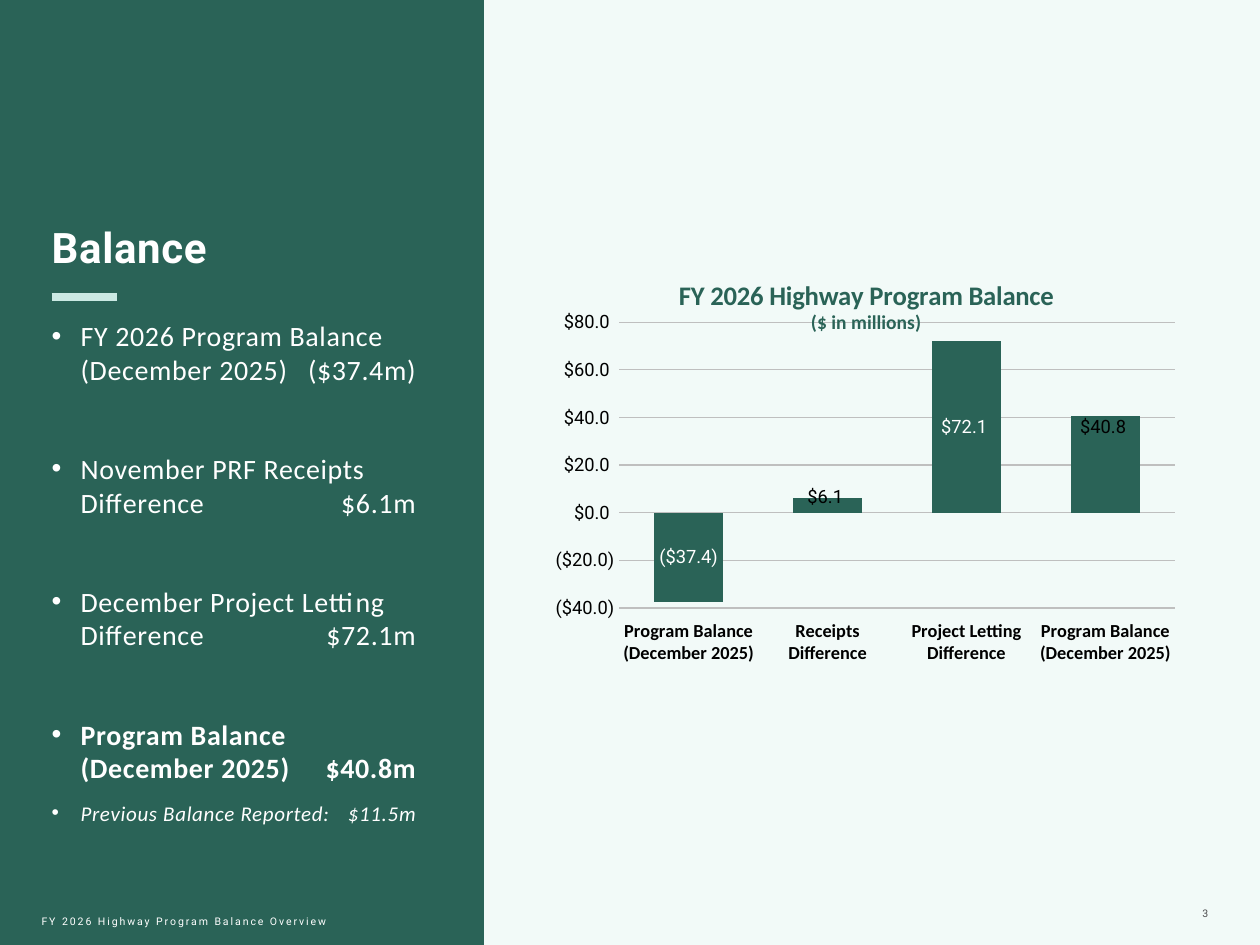
from lxml import etree
from pptx import Presentation
from pptx.chart.data import CategoryChartData
from pptx.dml.color import RGBColor
from pptx.enum.chart import XL_CHART_TYPE, XL_LABEL_POSITION, XL_TICK_LABEL_POSITION, XL_TICK_MARK
from pptx.enum.shapes import MSO_CONNECTOR, MSO_SHAPE
from pptx.enum.text import MSO_ANCHOR, MSO_AUTO_SIZE, PP_ALIGN
from pptx.oxml import parse_xml
from pptx.oxml.ns import nsdecls, qn
from pptx.util import Inches, Pt

COLUMNS = XL_CHART_TYPE.COLUMN_CLUSTERED
CENTER_LABEL, INSIDE_END = XL_LABEL_POSITION.CENTER, XL_LABEL_POSITION.INSIDE_END
LOW = XL_TICK_LABEL_POSITION.LOW
NO_TICK = XL_TICK_MARK.NONE
STRAIGHT = MSO_CONNECTOR.STRAIGHT
RECTANGLE = MSO_SHAPE.RECTANGLE
TOP, MIDDLE, BOTTOM = MSO_ANCHOR.TOP, MSO_ANCHOR.MIDDLE, MSO_ANCHOR.BOTTOM
NO_FIT = MSO_AUTO_SIZE.NONE
LEFT, RIGHT = PP_ALIGN.LEFT, PP_ALIGN.RIGHT
GREEN, MINT, PALE, WHITE, BLACK = "2A6357", "CBE9E3", "F2FAF8", "FFFFFF", "000000"
GRAY, DARK_GRAY = "BFBFBF", "4D4D4F"
HEADING, BODY = "Roboto", "Calibri"
MONEY = r'"$"#,##0.0_);\("$"#,##0.0\)'


def rgb(value):
    return RGBColor.from_string(value)


def manual_layout(**parts):
    body = "".join(f'<c:{tag} val="{value}"/>' for tag, value in parts.items())
    return parse_xml(f'<c:layout {nsdecls("c")}><c:manualLayout>{body}</c:manualLayout></c:layout>')


class SlideBuilder:
    """Hold the slide and its style, with one method for each kind of element."""

    def __init__(self, slide):
        self.slide = slide
        slide.background.fill.solid()
        slide.background.fill.fore_color.rgb = rgb(PALE)

    def style(self, font, size, color, name=BODY, bold=False, italic=False):
        font.size, font.name, font.bold, font.italic = Pt(size), name, bold, italic
        font.color.rgb = rgb(color)

    def space_letters(self, paragraph, points):
        for run in paragraph.runs:
            run._r.get_or_add_rPr().set("spc", str(round(points * 100)))

    def frame(self, shape, anchor, inset=0.0):
        frame = shape.text_frame
        frame.word_wrap, frame.auto_size, frame.vertical_anchor = True, NO_FIT, anchor
        frame.margin_left = frame.margin_right = 0
        frame.margin_top = frame.margin_bottom = Inches(inset)
        return frame

    def back_panel(self, box, color):
        panel = self.slide.shapes.add_shape(RECTANGLE, *map(Inches, box))
        panel.shadow.inherit = False
        panel.fill.solid()
        panel.fill.fore_color.rgb = rgb(color)
        panel.line.fill.background()
        self.slide.shapes.title._element.addprevious(panel._element)

    def title(self, text, box):
        title = self.slide.shapes.title
        title.left, title.top, title.width, title.height = map(Inches, box)
        heading = self.frame(title, TOP).paragraphs[0]
        heading.text, heading.alignment = text, LEFT
        self.style(heading.font, 24, WHITE, HEADING, bold=True)
        self.space_letters(heading, 0.4)

    def small_text(self, text, box, color, anchor, align):
        shape = self.slide.shapes.add_textbox(*map(Inches, box))
        line = self.frame(shape, anchor, 0.05).paragraphs[0]
        line.text, line.alignment = text, align
        self.style(line.font, 6, color, HEADING)
        self.space_letters(line, 1.1)

    def rule(self, left, right, y, color, width):
        rule = self.slide.shapes.add_connector(
            STRAIGHT, Inches(left), Inches(y), Inches(right), Inches(y))
        rule.line.color.rgb, rule.line.width = rgb(color), Pt(width)
        etree.SubElement(rule._element.spPr, qn("a:effectLst"))

    def bullets(self, items, box, indent, tab):
        shape = self.slide.shapes.add_textbox(*map(Inches, box))
        frame = self.frame(shape, TOP)
        for index, (text, gap, size, bold, italic) in enumerate(items):
            item = frame.add_paragraph() if index else frame.paragraphs[0]
            item.text = text
            props = item._p.get_or_add_pPr()
            props.set("marL", str(Inches(indent)))
            props.set("indent", str(-Inches(indent)))
            etree.SubElement(props, qn("a:buFont")).set("typeface", "Arial")
            etree.SubElement(props, qn("a:buChar")).set("char", "•")
            stop = etree.SubElement(etree.SubElement(props, qn("a:tabLst")), qn("a:tab"))
            stop.set("pos", str(Inches(tab)))
            stop.set("algn", "r")
            if index:
                item.space_before = Pt(gap)
            self.style(item.font, size, WHITE, bold=bold, italic=italic)
            self.space_letters(item, 0.4)

    def column_chart(self, box, titles, data, label_styles):
        chart = self.slide.shapes.add_chart(COLUMNS, *map(Inches, box), data).chart
        chart.has_legend = False
        self.style(chart.font, 10, BLACK, HEADING)

        title_frame = chart.chart_title.text_frame
        for index, (text, size) in enumerate(titles):
            line = title_frame.add_paragraph() if index else title_frame.paragraphs[0]
            line.text = text
            self.style(line.font, size, GREEN, bold=True)
        title = chart.chart_title._element
        title.find(qn("c:tx")).addnext(
            manual_layout(xMode="edge", yMode="edge", x=0.21, y=-0.01))
        chart.chart_title.include_in_layout = False

        categories, values = chart.category_axis, chart.value_axis
        for axis in (categories, values):
            axis.major_tick_mark = axis.minor_tick_mark = NO_TICK
        categories.tick_label_position = LOW
        self.style(categories.tick_labels.font, 10.5, BLACK, bold=True)
        self.style(values.tick_labels.font, 10.5, BLACK, HEADING)
        values.minimum_scale, values.maximum_scale, values.major_unit = -40, 80, 20
        values.tick_labels.number_format = MONEY
        values.tick_labels.number_format_is_linked = False
        values.format.line.fill.background()
        for line in (categories.format.line, values.major_gridlines.format.line):
            line.color.rgb, line.width = rgb(GRAY), Pt(0.75)

        plot = chart.plots[0]
        plot.gap_width, plot.overlap, plot.vary_by_categories = 100, -24, False
        series = plot.series[0]
        series.invert_if_negative = False
        series.format.fill.solid()
        series.format.fill.fore_color.rgb = rgb(GREEN)
        for index, (color, position, shift) in enumerate(label_styles):
            label = series.points[index].data_label
            self.style(label.font, 10.5, color, HEADING)
            label.position = position
            if shift:
                label._dLbl.find(qn("c:idx")).addnext(manual_layout(x=0, y=shift))
        labels = series.data_labels
        labels.show_value, labels.position = True, CENTER_LABEL
        labels.number_format, labels.number_format_is_linked = MONEY, False
        self.style(labels.font, 10.5, BLACK, HEADING)

        area = chart._chartSpace.chart.plotArea
        for old in area.findall(qn("c:layout")):
            area.remove(old)
        area.insert(0, manual_layout(layoutTarget="inner", xMode="edge", yMode="edge",
                                     x=0.1, y=0.145, w=0.9, h=0.648))


def main():
    presentation = Presentation()
    presentation.slide_width, presentation.slide_height = Inches(10), Inches(7.5)
    builder = SlideBuilder(presentation.slides.add_slide(presentation.slide_layouts[5]))
    builder.back_panel((0, 0, 3.84, 7.5), GREEN)
    builder.title("Balance", (0.41, 1.76, 3.12, 0.45))
    builder.rule(0.41, 0.93, 2.36, MINT, 4.5)
    builder.bullets([
        ("FY 2026 Program Balance\v(December 2025)\t($37.4m)", 0, 16, False, False),
        ("November PRF Receipts\vDifference\t$6.1m", 37.5, 16, False, False),
        ("December Project Letting\vDifference\t$72.1m", 37.5, 16, False, False),
        ("Program Balance\v(December 2025)\t$40.8m", 37.5, 16, True, False),
        ("Previous Balance Reported:\t$11.5m", 9, 12, False, True),
    ], (0.41, 2.53, 3.12, 4.06), indent=0.23, tab=3.02)

    balance = CategoryChartData(number_format=MONEY)
    balance.categories = ["Program Balance (December 2025)", "Receipts Difference",
                          "Project Letting Difference", "Program Balance (December 2025)"]
    balance.add_series("Series 1", (-37.4, 6.1, 72.1, 40.8))
    builder.column_chart(
        (4.41, 2.05, 4.92, 3.5),
        [("FY 2026 Highway Program Balance", 15.3), ("($ in millions)", 11.2)], balance,
        [(WHITE, CENTER_LABEL, 0), (BLACK, CENTER_LABEL, -0.02),
         (WHITE, CENTER_LABEL, 0), (BLACK, INSIDE_END, -0.01)])

    builder.small_text("FY 2026 Highway Program Balance Overview",
                       (0.33, 7.16, 3, 0.3), WHITE, MIDDLE, LEFT)
    builder.small_text("3", (8.62, 6.95, 0.97, 0.4), DARK_GRAY, BOTTOM, RIGHT)
    presentation.save("out.pptx")


if __name__ == "__main__":
    main()
